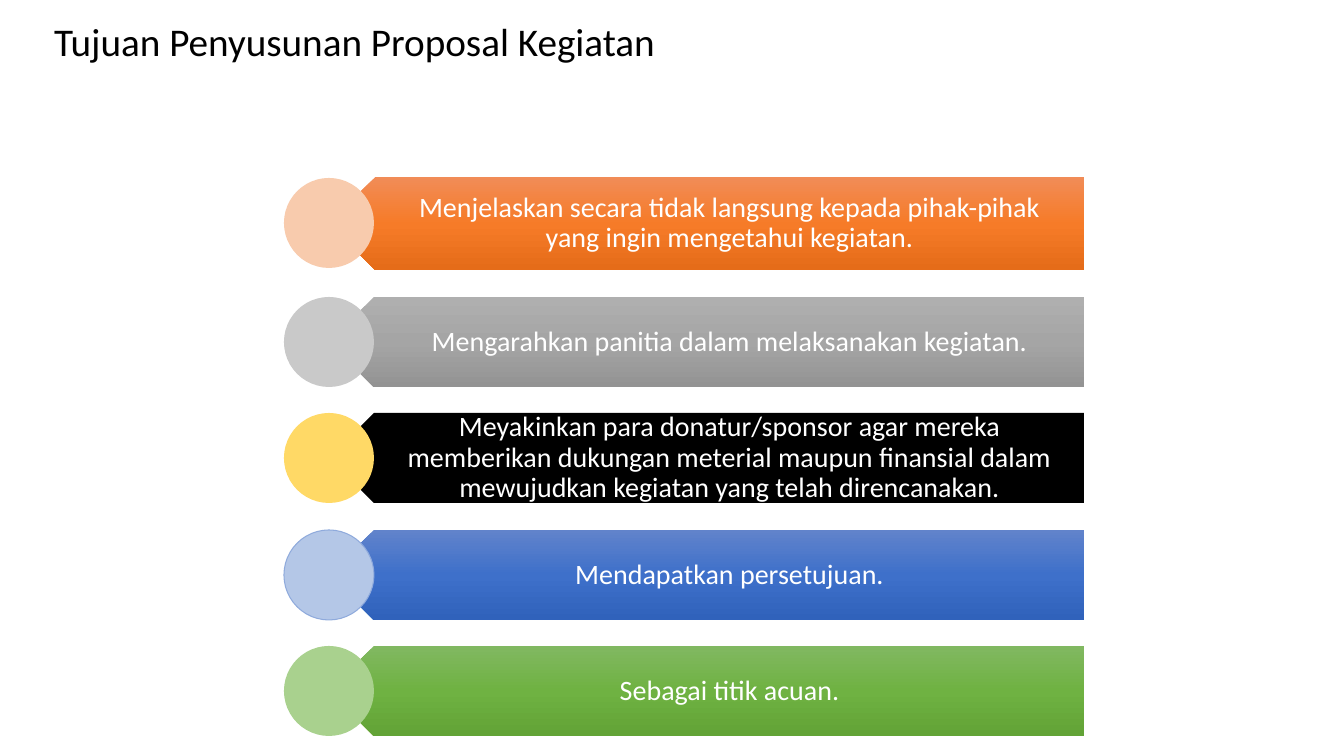
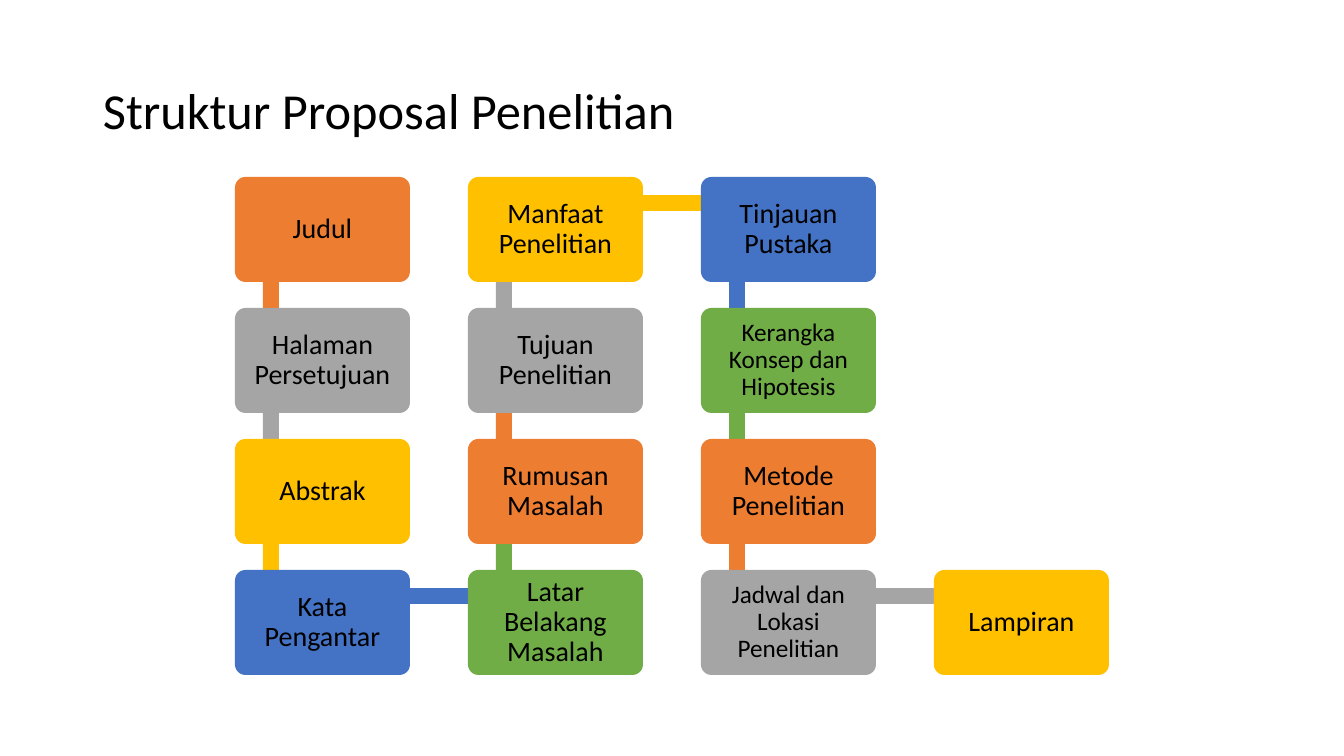
"""Build two slides on the aims and the structure of a proposal."""
from copy import deepcopy
from dataclasses import dataclass

from pptx import Presentation
from pptx import util as u
from pptx.dml.color import RGBColor
from pptx.enum import shapes, text
from pptx.oxml.ns import qn
from pptx.shapes.autoshape import Shape
from pptx.slide import Slide

EMU_PER_INCH = 914400
PX_PER_INCH = 100.8
SLIDE_WIDTH, SLIDE_HEIGHT = 1344, 756
FONT = "Calibri"
COLOURS = {
    "black": "000000", "white": "FFFFFF", "orange": "ED7D31", "grey": "A5A5A5",
    "yellow": "FFC000", "blue": "4472C4", "green": "70AD47",
    "pale orange": "F8CBAD", "pale grey": "C9C9C9", "pale yellow": "FFD966",
    "pale blue": "B4C7E7", "pale green": "A9D18E", "circle edge": "8FAADC",
    "orange top": "F18C57", "orange middle": "F67B28", "orange bottom": "E56C19",
    "grey top": "AFAFAF", "grey middle": "A5A5A5", "grey bottom": "939393",
    "blue top": "6183CB", "blue middle": "3E70CA", "blue bottom": "3062BB",
    "green top": "81B861", "green middle": "6FB242", "green bottom": "62A336",
}

BAR_LEFT, BAR_WIDTH = 329, 755
BAR_TEXT_LEFT = 352
CIRCLE_LEFT, CIRCLE_SIZE = 284, 90

GRID_LEFT, GRID_TOP = 235, 177
COLUMN_PITCH, ROW_PITCH, ROWS = 233, 131, 4
STEP_WIDTH, STEP_HEIGHT = 175, 105
LINK_THICKNESS = 16
STEP_COLOURS = ["orange", "grey", "yellow", "blue", "green"]


@dataclass(frozen=True)
class Box:
    left: int
    top: int
    width: int
    height: int

    def emu(self) -> tuple[int, ...]:
        return tuple(px(side) for side in (self.left, self.top, self.width, self.height))


@dataclass(frozen=True)
class Aim:
    label: str
    hue: str
    top: int
    height: int = 90
    gradient: bool = True
    edge: str = ""


@dataclass(frozen=True)
class Step:
    label: str
    size: int = 20
    inset: int = 8


AIMS = [
    Aim("Menjelaskan secara tidak langsung kepada pihak-pihak yang ingin mengetahui kegiatan.",
        "orange", 177, 93),
    Aim("Mengarahkan panitia dalam melaksanakan kegiatan.", "grey", 297),
    Aim("Meyakinkan para donatur/sponsor agar mereka memberikan dukungan meterial maupun "
        "finansial dalam mewujudkan kegiatan yang telah direncanakan.",
        "yellow", 413, gradient=False),
    Aim("Mendapatkan persetujuan.", "blue", 530, edge="circle edge"),
    Aim("Sebagai titik acuan.", "green", 646),
]
STEPS = [
    Step("Judul"), Step("Halaman Persetujuan"), Step("Abstrak"), Step("Kata Pengantar"),
    Step("Latar Belakang Masalah"), Step("Rumusan Masalah"), Step("Tujuan Penelitian"),
    Step("Manfaat Penelitian"), Step("Tinjauan Pustaka"),
    Step("Kerangka Konsep dan Hipotesis", 18, 7), Step("Metode Penelitian"),
    Step("Jadwal dan Lokasi Penelitian", 18, 7), Step("Lampiran"),
]


def px(length: int) -> int:
    return round(length * EMU_PER_INCH / PX_PER_INCH)


def colour(name: str) -> RGBColor:
    return RGBColor.from_string(COLOURS[name])


def write(shape: Shape, label: str, size: int, ink: str, insets: tuple[int, int, int, int],
          align: text.PP_ALIGN = text.PP_ALIGN.CENTER) -> None:
    frame = shape.text_frame
    frame.word_wrap = True
    frame.vertical_anchor = text.MSO_ANCHOR.MIDDLE
    frame.margin_left, frame.margin_top, frame.margin_right, frame.margin_bottom = map(px, insets)
    paragraph = frame.paragraphs[0]
    paragraph.alignment = align
    paragraph.line_spacing = 0.9
    run = paragraph.add_run()
    run.text = label
    run.font.name = FONT
    run.font.size = u.Pt(size)
    run.font.color.rgb = colour(ink)


def add_shape(slide: Slide, kind: shapes.MSO_SHAPE, box: Box, fill: str, edge: str = "") -> Shape:
    shape = slide.shapes.add_shape(kind, *box.emu())
    shape.shadow.inherit = False
    shape.fill.solid()
    shape.fill.fore_color.rgb = colour(fill)
    if edge:
        shape.line.color.rgb = colour(edge)
        shape.line.width = u.Pt(0.75)
    else:
        shape.line.fill.background()
    return shape


def shade(shape: Shape, hue: str) -> None:
    shape.fill.gradient()
    shape.fill.gradient_angle = 270
    first = shape._element.spPr.find(".//" + qn("a:gs"))
    first.addnext(deepcopy(first))
    levels = [(0, "top"), (0.5, "middle"), (1, "bottom")]
    for stop, (position, level) in zip(shape.fill.gradient_stops, levels):
        stop.position = position
        stop.color.rgb = colour(f"{hue} {level}")


def add_title(slide: Slide, label: str, box: Box, size: int) -> None:
    title = slide.shapes.add_textbox(*box.emu())
    write(title, label, size, "black", (10, 5, 10, 5), text.PP_ALIGN.LEFT)


def add_aim(slide: Slide, aim: Aim) -> None:
    bar = add_shape(slide, shapes.MSO_SHAPE.PENTAGON,
                    Box(BAR_LEFT, aim.top, BAR_WIDTH, aim.height), "black")
    bar._element.spPr.find(qn("a:xfrm")).set("flipH", "1")
    if aim.gradient:
        shade(bar, aim.hue)
    text_width = BAR_LEFT + BAR_WIDTH - BAR_TEXT_LEFT
    label = slide.shapes.add_textbox(*Box(BAR_TEXT_LEFT, aim.top, text_width, aim.height).emu())
    write(label, aim.label, 20, "white", (39, 8, 16, 8))
    circle_top = aim.top + (aim.height - CIRCLE_SIZE) // 2
    add_shape(slide, shapes.MSO_SHAPE.OVAL,
              Box(CIRCLE_LEFT, circle_top, CIRCLE_SIZE, CIRCLE_SIZE), f"pale {aim.hue}", aim.edge)


def step_corner(index: int) -> tuple[int, int]:
    column, row = divmod(index, ROWS)
    if column % 2:
        row = ROWS - 1 - row
    return GRID_LEFT + column * COLUMN_PITCH, GRID_TOP + row * ROW_PITCH


def add_link(slide: Slide, index: int, fill: str) -> None:
    left, top = step_corner(index)
    next_left, next_top = step_corner(index + 1)
    if left == next_left:
        box = Box(left + 28, min(top, next_top) + 26, LINK_THICKNESS, ROW_PITCH)
    else:
        box = Box(left + 36, top + 18, COLUMN_PITCH, LINK_THICKNESS)
    add_shape(slide, shapes.MSO_SHAPE.RECTANGLE, box, fill)


def add_step(slide: Slide, index: int, step: Step) -> None:
    fill = STEP_COLOURS[index % len(STEP_COLOURS)]
    if index < len(STEPS) - 1:
        add_link(slide, index, fill)
    card = add_shape(slide, shapes.MSO_SHAPE.ROUNDED_RECTANGLE,
                     Box(*step_corner(index), STEP_WIDTH, STEP_HEIGHT), fill)
    card.adjustments[0] = 0.1
    write(card, step.label, step.size, "black", (step.inset,) * 4)


def main() -> None:
    presentation = Presentation()
    presentation.slide_width = px(SLIDE_WIDTH)
    presentation.slide_height = px(SLIDE_HEIGHT)
    blank = presentation.slide_layouts[6]

    aims_slide = presentation.slides.add_slide(blank)
    add_title(aims_slide, "Tujuan Penyusunan Proposal Kegiatan", Box(44, 0, 1159, 88), 28)
    for aim in AIMS:
        add_aim(aims_slide, aim)

    structure_slide = presentation.slides.add_slide(blank)
    add_title(structure_slide, "Struktur Proposal Penelitian", Box(93, 40, 1159, 146), 36)
    for index, step in enumerate(STEPS):
        add_step(structure_slide, index, step)

    presentation.save("out.pptx")


if __name__ == "__main__":
    main()
